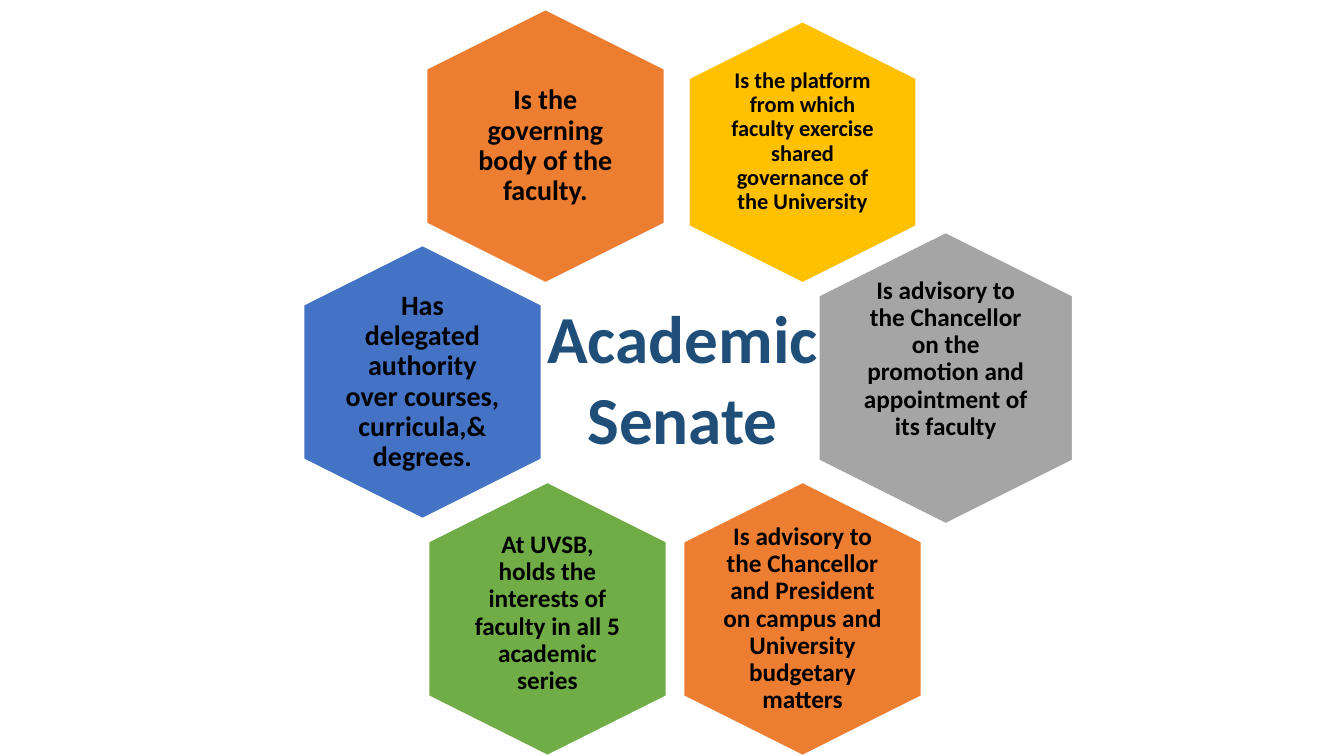
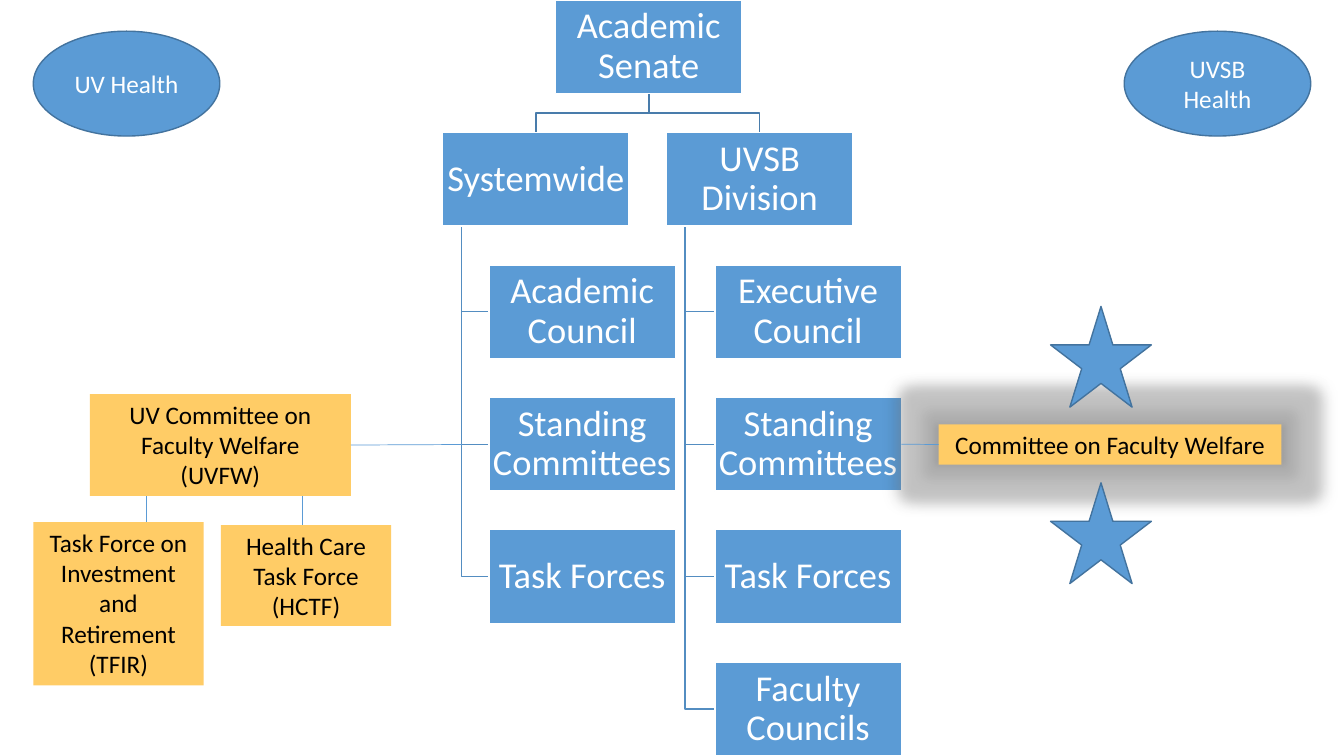
import pptx
import pptx.dml.color
import pptx.enum.shapes
import pptx.enum.text
import pptx.oxml
import pptx.oxml.ns
import pptx.util

Inches = pptx.util.Inches
Pt = pptx.util.Pt
PRESET = pptx.enum.shapes.MSO_SHAPE
ANCHOR = pptx.enum.text.MSO_ANCHOR

COLORS = {
    "black": "000000", "white": "FFFFFF", "title": "1F4E79",
    "orange": "ED7D31", "gray": "A5A5A5", "gold": "FFC000",
    "royal": "4472C4", "green": "70AD47",
    "blue": "5B9BD5", "outline": "43739E",
    "branch": "538DC1", "trunk": "497CAB", "note": "FFCC66",
}
NAMESPACE = pptx.oxml.ns.nsdecls("a")
GLOW = (
    f'<a:glow {NAMESPACE} rad="228600"><a:srgbClr val="{COLORS["gray"]}">'
    '<a:alpha val="40000"/></a:srgbClr></a:glow>'
)
SOFT_SHADOW = (
    f'<a:outerShdw {NAMESPACE} blurRad="63500" sx="102000" sy="102000" algn="ctr" '
    f'rotWithShape="0"><a:srgbClr val="{COLORS["black"]}">'
    '<a:alpha val="40000"/></a:srgbClr></a:outerShdw>'
)


class Deck:
    """Holds the shared style and the slide being drawn."""

    font = "Calibri"

    def __init__(self):
        self.prs = pptx.Presentation()
        self.prs.slide_width = Inches(13.33)
        self.prs.slide_height = Inches(7.5)
        self.slide = None

    def new_slide(self):
        self.slide = self.prs.slides.add_slide(self.prs.slide_layouts[6])

    def color(self, name):
        return pptx.dml.color.RGBColor.from_string(COLORS[name])

    def outline(self, shape, name, width=1):
        shape.line.color.rgb = self.color(name)
        shape.line.width = Pt(width)

    def set_text(self, shape, text, size, color, bold=False, spacing=1.0,
                 anchor=ANCHOR.MIDDLE, inset=(0.1, 0.05)):
        frame = shape.text_frame
        frame.word_wrap = True
        frame.vertical_anchor = anchor
        frame.margin_left = frame.margin_right = Inches(inset[0])
        frame.margin_top = frame.margin_bottom = Inches(inset[1])
        frame.text = text
        paragraph = frame.paragraphs[0]
        paragraph.alignment = pptx.enum.text.PP_ALIGN.CENTER
        paragraph.line_spacing = spacing
        font = paragraph.runs[0].font
        font.name, font.size, font.bold = self.font, Pt(size), bold
        font.color.rgb = self.color(color)

    def text(self, box, text, size, color, **style):
        label = self.slide.shapes.add_textbox(*map(Inches, box))
        self.set_text(label, text, size, color, **style)

    def shape(self, preset, box, fill, line=None):
        shape = self.slide.shapes.add_shape(preset, *map(Inches, box))
        shape.shadow.inherit = False
        shape.fill.solid()
        shape.fill.fore_color.rgb = self.color(fill)
        if line:
            self.outline(shape, line)
        else:
            shape.line.fill.background()
        return shape

    def hexagon(self, center, length, fill, text, size, anchor, inset):
        """Upright hexagon; its text sits in a level box on the same centre."""
        def centered(width, height):
            return center[0] - width / 2, center[1] - height / 2, width, height

        hexagon = self.shape(PRESET.HEXAGON, centered(length, 0.87 * length), fill, "white")
        hexagon.rotation = 90
        self.text(centered(0.6 * length, 0.69 * length), text, size, "black", bold=True,
                  spacing=0.9, anchor=anchor, inset=(inset, inset))

    def org_box(self, box, text):
        unit = self.shape(PRESET.RECTANGLE, box, "blue", "white")
        self.set_text(unit, text, 26, "white", spacing=0.9, inset=(0.02, 0.02))
        return unit

    def note(self, box, text):
        note = self.shape(PRESET.RECTANGLE, box, "note")
        self.set_text(note, text, 18, "black", anchor=ANCHOR.TOP)
        return note

    def ellipse(self, box, text):
        ellipse = self.shape(PRESET.OVAL, box, "blue", "outline")
        self.set_text(ellipse, text, 18, "white")

    def bent_line(self, points, color):
        start, *rest = [(Inches(x), Inches(y)) for x, y in points]
        builder = self.slide.shapes.build_freeform(*start)
        builder.add_line_segments(rest, close=False)
        branch = builder.convert_to_shape()
        branch.shadow.inherit = False
        branch.fill.background()
        self.outline(branch, color)

    def line(self, start, end, begin_shape=None, end_shape=None):
        """Thin line, joined to the right side of one box and the left of another."""
        link = self.slide.shapes.add_connector(
            pptx.enum.shapes.MSO_CONNECTOR.STRAIGHT, *map(Inches, start + end))
        self.outline(link, "blue", 0.5)
        link._element.spPr.append(pptx.oxml.parse_xml(f"<a:effectLst {NAMESPACE}/>"))
        if begin_shape is not None:
            link.begin_connect(begin_shape, 3)
        if end_shape is not None:
            link.end_connect(end_shape, 1)

    def halo(self, shape):
        """Add a grey glow and a soft shadow to the shape's effects."""
        effects = shape._element.spPr.find(pptx.oxml.ns.qn("a:effectLst"))
        for effect in (GLOW, SOFT_SHADOW):
            effects.append(pptx.oxml.parse_xml(effect))


def roles_slide(deck):
    deck.new_slide()
    roles = [
        ((5.41, 1.45), 2.71, "orange", "Is the governing body of the faculty.",
         20, ANCHOR.MIDDLE, 0.08),
        ((9.38, 3.75), 2.89, "gray",
         "Is advisory to the Chancellor on the promotion and appointment of its faculty",
         18, ANCHOR.TOP, 0),
        ((7.96, 1.51), 2.59, "gold",
         "Is the platform from which faculty exercise shared governance of the University",
         16, ANCHOR.TOP, 0.07),
        ((4.19, 3.79), 2.71, "royal",
         "Has delegated authority over courses, curricula,& degrees.",
         20, ANCHOR.MIDDLE, 0),
        ((5.43, 6.14), 2.71, "green",
         "At UVSB, holds the interests of faculty in all 5 academic series",
         18, ANCHOR.TOP, 0.07),
        ((7.96, 6.14), 2.71, "orange",
         "Is advisory to the Chancellor and President on campus and University budgetary matters",
         18, ANCHOR.MIDDLE, 0),
    ]
    for role in roles:
        deck.hexagon(*role)
    deck.text((5.37, 2.94, 2.8, 1.62), "Academic Senate", 48, "title", bold=True,
              anchor=ANCHOR.TOP, inset=(0, 0))


def structure_slide(deck):
    deck.new_slide()
    width, height = 1.85, 0.93
    row_pitch = (7.5 - height) / 5
    senate_left = 5.51
    senate_middle = senate_left + width / 2
    # head, its left edge, left edge of its units, units
    divisions = [
        ("Systemwide", 4.39, 4.85,
         ["Academic Council", "Standing Committees", "Task Forces"]),
        ("UVSB Division", 6.61, 7.09,
         ["Executive Council", "Standing Committees", "Task Forces", "Faculty Councils"]),
    ]

    for x, top in ((1.45, 4.85), (3, 4.86)):
        deck.line((x, top), (x, top + 0.36))

    for _, head_left, unit_left, units in divisions:
        head_middle = head_left + width / 2
        fork = (height + row_pitch) / 2
        deck.bent_line([(senate_middle, height), (senate_middle, fork),
                        (head_middle, fork), (head_middle, row_pitch)], "trunk")
        trunk = head_left + width / 10
        for row in range(2, 2 + len(units)):
            middle = row * row_pitch + height / 2
            deck.bent_line([(trunk, row_pitch + height), (trunk, middle),
                            (unit_left, middle)], "branch")

    deck.org_box((senate_left, 0, width, height), "Academic Senate")
    standing = None
    for head, head_left, unit_left, units in divisions:
        deck.org_box((head_left, row_pitch, width, height), head)
        for row, unit in enumerate(units, 2):
            box = deck.org_box((unit_left, row * row_pitch, width, height), unit)
            if unit == "Standing Committees":
                standing = box

    welfare = deck.note((9.31, 4.21, 3.4, 0.4), "Committee on Faculty Welfare")
    deck.halo(welfare)
    for top in (3.04, 4.79):
        deck.shape(PRESET.STAR_5_POINT, (10.42, top, 1, 1), "blue", "outline")
    system_welfare = deck.note((0.89, 3.91, 2.59, 1.01),
                               "UV Committee on Faculty Welfare (UVFW)")
    deck.line((8.94, 4.41), (9.31, 4.41), standing, welfare)
    for left, name in ((0.33, "UV Health"), (11.15, "UVSB Health")):
        deck.ellipse((left, 0.31, 1.85, 1.04), name)
    deck.note((2.19, 5.21, 1.69, 1), "Health Care Task Force (HCTF)")
    deck.note((0.33, 5.18, 1.69, 1.62), "Task Force on Investment and Retirement (TFIR)")
    deck.line((3.48, 4.41), (4.58, 4.41), system_welfare)


def main():
    deck = Deck()
    roles_slide(deck)
    structure_slide(deck)
    deck.prs.save("out.pptx")


if __name__ == "__main__":
    main()
